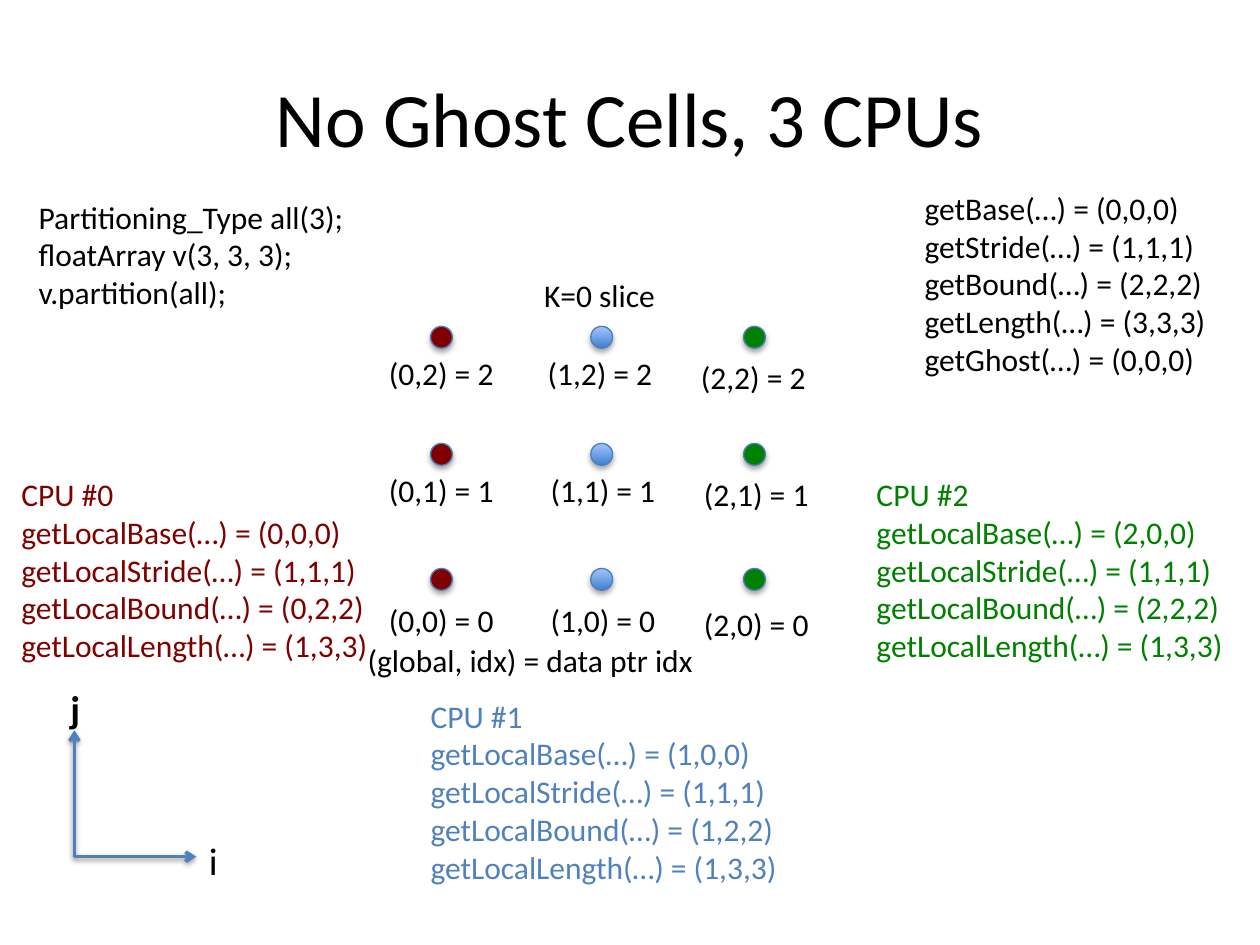
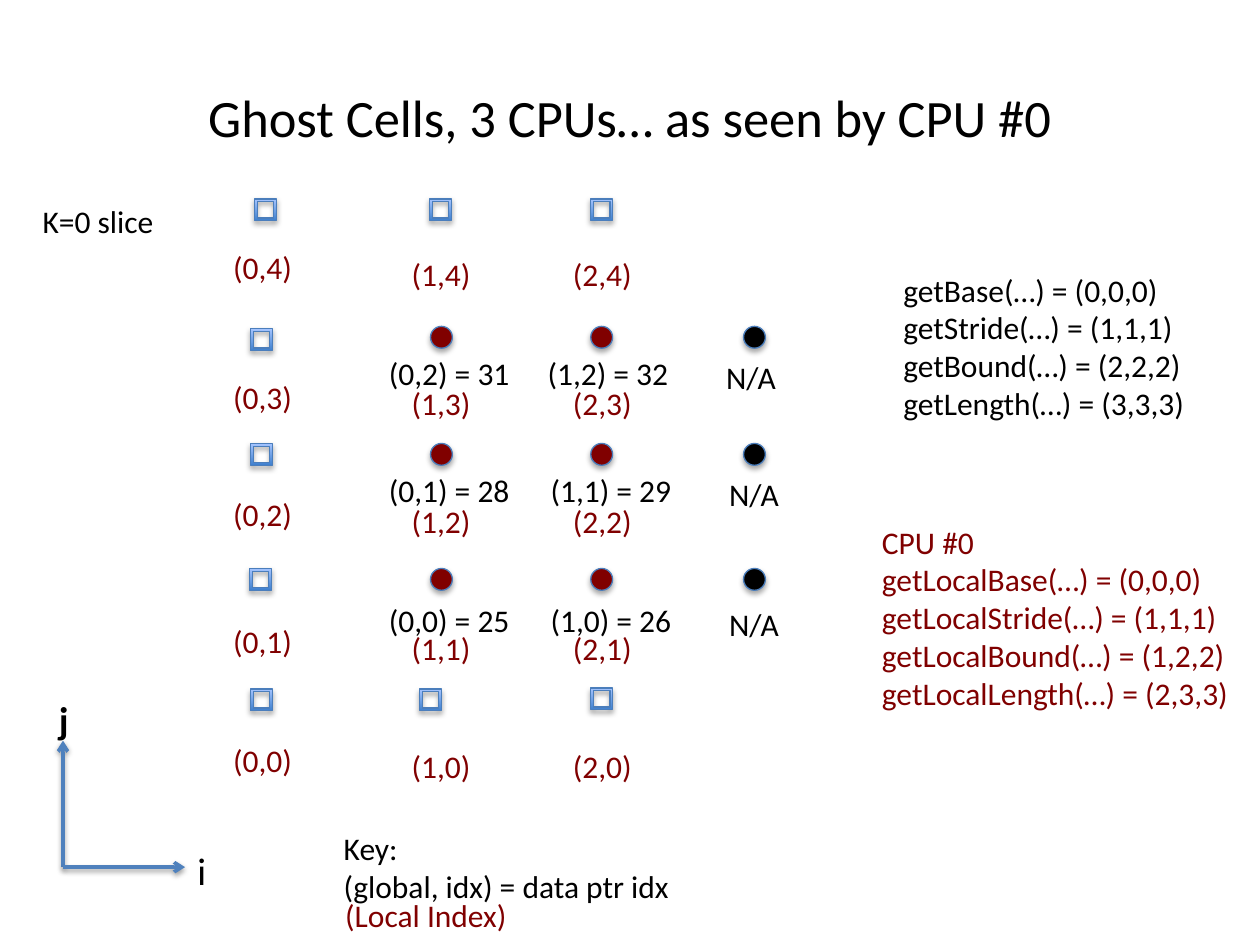
"""Build two slides that compare array partitions with and without ghost cells."""
from pptx import Presentation
from pptx.dml.color import RGBColor
from pptx.enum.shapes import MSO_CONNECTOR, MSO_SHAPE
from pptx.enum.text import MSO_ANCHOR, MSO_AUTO_SIZE, PP_ALIGN
from pptx.oxml import parse_xml
from pptx.oxml.ns import nsdecls
from pptx.util import Cm, Pt

BLACK = RGBColor(0x00, 0x00, 0x00)
MAROON = RGBColor(0x80, 0x00, 0x00)
GREEN = RGBColor(0x00, 0x80, 0x00)
BLUE = RGBColor(0x4F, 0x81, 0xBD)
OUTLINE = RGBColor(0x4B, 0x7E, 0xBC)
DEEP_BLUE = RGBColor(0x3F, 0x80, 0xCE)
PALE_BLUE = RGBColor(0xA4, 0xC4, 0xFF)
BLUE_GRADIENT = (DEEP_BLUE, PALE_BLUE)

BODY = {"name": "Calibri", "size": Pt(18), "bold": False}
AXIS = {**BODY, "size": Pt(22)}
BOLD_AXIS = {**AXIS, "bold": True}

MARKER_SIZE = 0.44
DOT_LEFTS = (8.68, 11.91, 14.99)
DOT_TOPS = (11.46, 8.94, 6.58)
LABEL_LEFTS = (7.59, 10.85, 13.94)
LABEL_TOPS = (11.99, 9.37, 7.01)
LOCAL_LEFTS = (4.45, 8.05, 11.3)
LOCAL_TOPS = (14.81, 12.42, 9.86, 7.49, 4.88)
GHOST_CELLS = (
    (5.05, 6.63), (5.05, 8.94), (5.03, 11.46), (5.13, 4.01), (5.05, 13.89),
    (8.66, 4.01), (8.46, 13.89), (11.91, 13.87), (11.91, 4.01),
)
GLOBAL_WIDTH = 6.22
LOCAL_WIDTH = 7.57


def accessors(scope, **values):
    """Return one line of text for each array accessor and its value."""
    return [f"get{scope}{name}(…) = ({value})" for name, value in values.items()]


class SlideBuilder:
    """Hold the shared style and the current slide."""

    def __init__(self):
        """Start an empty deck of 4:3 slides."""
        self.deck = Presentation()
        self.deck.slide_width = Cm(25.4)
        self.deck.slide_height = Cm(19.05)
        self.page = None

    def format_span(self, span, style, color):
        """Apply a style and a colour to a run."""
        for name, value in style.items():
            setattr(span.font, name, value)
        span.font.color.rgb = color

    def start(self, title, size):
        """Add a slide and place its title."""
        self.page = self.deck.slides.add_slide(self.deck.slide_layouts[5])
        box = self.page.shapes.title
        place = {"left": 1.27, "top": 0.76, "width": 22.86, "height": 3.18}
        for name, value in place.items():
            setattr(box, name, Cm(value))
        box.text_frame.vertical_anchor = MSO_ANCHOR.MIDDLE
        para = box.text_frame.paragraphs[0]
        para.alignment = PP_ALIGN.CENTER
        span = para.add_run()
        span.text = title
        self.format_span(span, {**BODY, "size": Pt(size)}, BLACK)

    def text(self, left, top, width, lines, color=BLACK, style=BODY, parent=None):
        """Add a text box with one paragraph for each line."""
        height = 0.25 + len(lines) * style["size"].cm * 1.22
        shapes = (parent or self.page).shapes
        box = shapes.add_textbox(Cm(left), Cm(top), Cm(width), Cm(height))
        frame = box.text_frame
        frame.word_wrap = False
        frame.auto_size = MSO_AUTO_SIZE.SHAPE_TO_FIT_TEXT
        for index, line in enumerate(lines):
            para = frame.add_paragraph() if index else frame.paragraphs[0]
            span = para.add_run()
            span.text = line
            self.format_span(span, style, color)

    def shadow(self, shape, distance, opacity):
        """Give a shape or connector a soft shadow below it."""
        shape._element.spPr.append(parse_xml(
            f'<a:effectLst {nsdecls("a")}><a:outerShdw blurRad="{Pt(3.1)}" '
            f'dist="{Pt(distance)}" dir="5400000" rotWithShape="0">'
            f'<a:srgbClr val="{BLACK}"><a:alpha val="{opacity * 1000}"/></a:srgbClr>'
            "</a:outerShdw></a:effectLst>"))

    def marker(self, kind, left, top, color):
        """Add a grid marker with a plain colour or a pair of gradient colours."""
        size = Cm(MARKER_SIZE)
        shape = self.page.shapes.add_shape(kind, Cm(left), Cm(top), size, size)
        if color == BLUE_GRADIENT:
            shape.fill.gradient()
            shape.fill.gradient_angle = 90
            for stop, shade in zip(shape.fill.gradient_stops, color):
                stop.color.rgb = shade
        else:
            shape.fill.solid()
            shape.fill.fore_color.rgb = color
        shape.line.color.rgb = OUTLINE
        shape.line.width = Pt(0.75)
        self.shadow(shape, 1.8, 35)

    def dots(self, colors):
        """Add the three by three grid of dots, one colour for each column."""
        for left, color in zip(DOT_LEFTS, colors):
            for top in DOT_TOPS:
                self.marker(MSO_SHAPE.OVAL, left, top, color)

    def dot_labels(self, columns, lefts, widths):
        """Label each dot, column by column from the bottom row up."""
        for i, column in enumerate(columns):
            for j, label in enumerate(column):
                shift = -0.06 if i and j == 2 else 0
                drop = 0.08 if i == 2 else 0
                self.text(lefts[i] + shift, LABEL_TOPS[j] + drop, widths[i], [label])

    def arrow(self, parent, start, end):
        """Add an arrow between two points."""
        points = [Cm(value) for value in (*start, *end)]
        line = parent.shapes.add_connector(MSO_CONNECTOR.STRAIGHT, *points)
        line.line.color.rgb = BLUE
        line.line.width = Pt(2)
        line.line._get_or_add_ln().append(
            parse_xml(f'<a:tailEnd {nsdecls("a")} type="arrow"/>'))
        self.shadow(line, 1.6, 38)

    def axes(self, left, top):
        """Add the grouped i and j axes from their common origin."""
        group = self.page.shapes.add_group_shape()
        self.arrow(group, (left, top), (left, top - 2.55))
        self.arrow(group, (left, top), (left + 2.46, top))
        self.text(left + 2.46, top - 0.53, 0.69, ["i"], style=AXIS, parent=group)
        self.text(left - 0.33, top - 3.58, 0.71, ["j"], style=BOLD_AXIS, parent=group)

    def cpu(self, left, top, number, color, **values):
        """Add the local accessors of one CPU."""
        lines = [f"CPU #{number}", *accessors("Local", **values)]
        self.text(left, top, LOCAL_WIDTH, lines, color)


def build_plain_partition(builder):
    """Build the slide without ghost cells."""
    builder.start("No Ghost Cells, 3 CPUs", 44)
    builder.dots((MAROON, BLUE_GRADIENT, GREEN))
    builder.axes(1.5, 17.27)
    columns = [[f"({i},{j}) = {j}" for j in range(3)] for i in range(3)]
    builder.dot_labels(columns, LABEL_LEFTS, (2.64, 2.64, 2.64))
    lines = accessors("", Base="0,0,0", Stride="1,1,1", Bound="2,2,2",
                      Length="3,3,3", Ghost="0,0,0")
    builder.text(18.39, 3.68, GLOBAL_WIDTH, lines)
    places = ((0.18, 9.45, MAROON), (8.43, 13.92, BLUE), (17.42, 9.45, GREEN))
    for number, (left, top, color) in enumerate(places):
        builder.cpu(left, top, number, color, Base=f"{number},0,0", Stride="1,1,1",
                    Bound=f"{number},2,2", Length="1,3,3")
    builder.text(0.53, 3.86, 6.71, [
        "Partitioning_Type all(3);", "floatArray v(3, 3, 3);", "v.partition(all);"])
    builder.text(7.16, 12.8, 7.14, ["(global, idx) = data ptr idx"])
    builder.text(10.72, 5.44, 2.77, ["K=0 slice"])


def build_ghost_partition(builder):
    """Build the slide with the ghost cells of the first CPU."""
    builder.start("Ghost Cells, 3 CPUs… as seen by CPU #0", 30)
    builder.dots((MAROON, MAROON, BLACK))
    columns = [[f"({i},{j}) = {25 + i + 3 * j}" for j in range(3)] for i in range(2)]
    builder.dot_labels([*columns, ["N/A"] * 3], (*LABEL_LEFTS[:2], 14.45),
                       (2.97, 2.97, 1.52))
    builder.axes(1.27, 17.48)
    for left, top in GHOST_CELLS:
        builder.marker(MSO_SHAPE.FRAME, left, top, BLUE_GRADIENT)
    builder.cpu(17.53, 10.41, 0, MAROON, Base="0,0,0", Stride="1,1,1",
                Bound="1,2,2", Length="2,3,3")
    lines = accessors("", Base="0,0,0", Stride="1,1,1", Bound="2,2,2", Length="3,3,3")
    builder.text(17.96, 5.33, GLOBAL_WIDTH, lines)
    builder.text(6.68, 16.59, 7.14, ["Key:", "(global, idx) = data ptr idx"])
    builder.text(6.71, 17.93, 3.78, ["(Local Index)"], MAROON)
    for i, left in enumerate(LOCAL_LEFTS):
        for j, top in enumerate(LOCAL_TOPS):
            drop = 0.13 if i else 0
            builder.text(left, top + drop, 1.7, [f"({i},{j})"], MAROON)
    builder.text(0.61, 3.94, 2.77, ["K=0 slice"])


def main():
    """Build and save the deck."""
    builder = SlideBuilder()
    build_plain_partition(builder)
    build_ghost_partition(builder)
    builder.deck.save("out.pptx")


if __name__ == "__main__":
    main()
